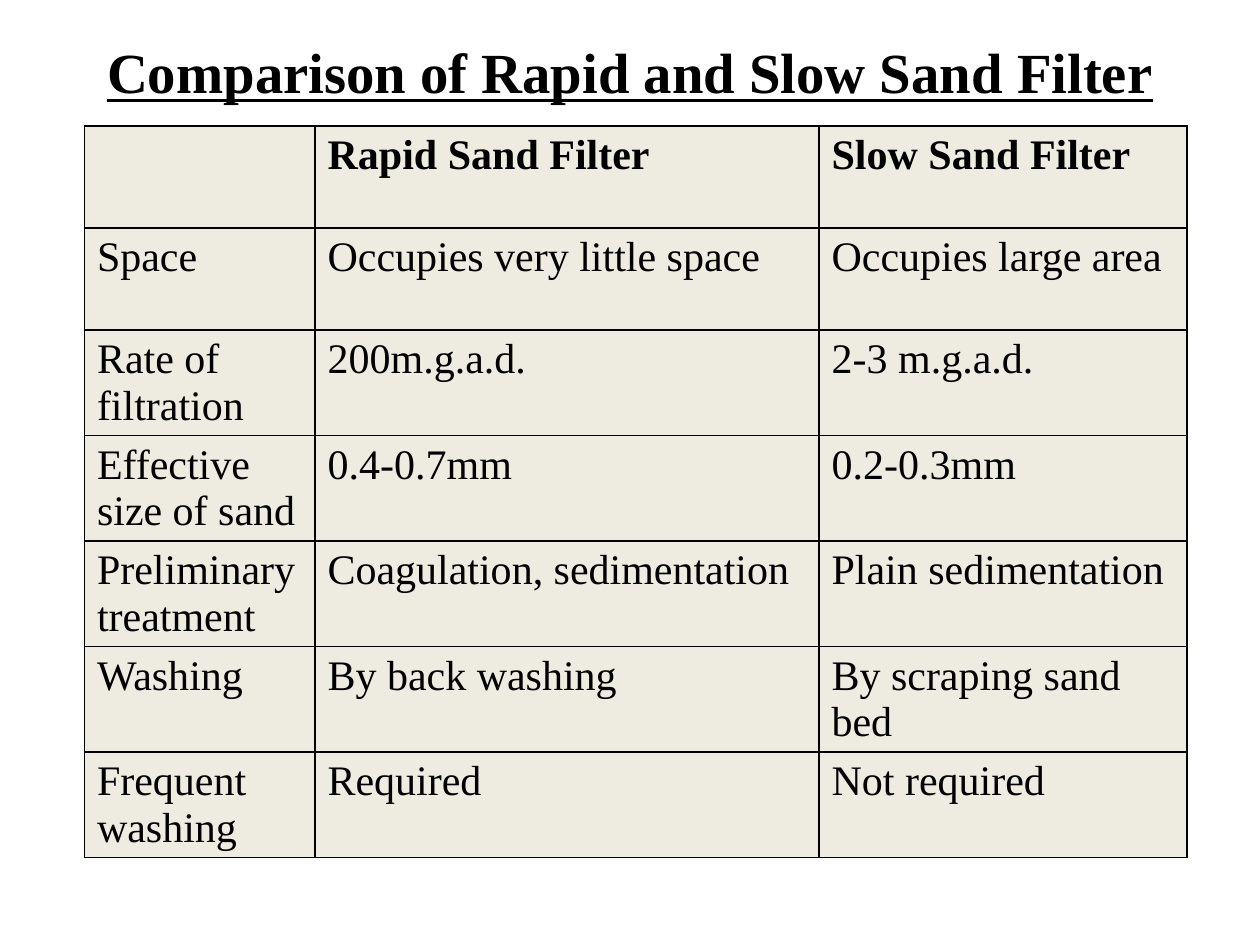
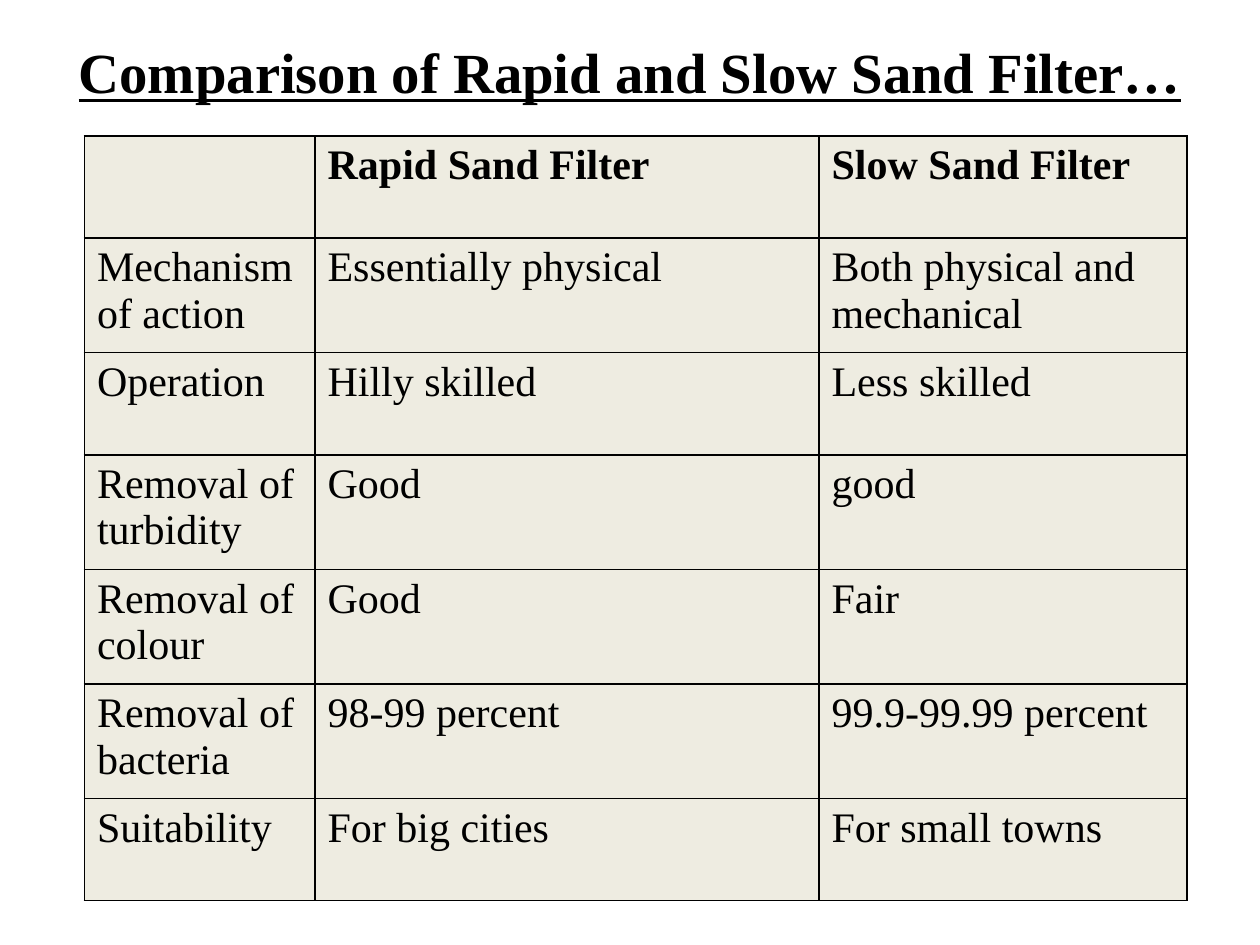
from lxml import etree
from pptx import Presentation
from pptx.dml.color import RGBColor
from pptx.enum import text
from pptx.oxml import ns
from pptx.util import Inches, Pt

COLORS = {"ink": "000000", "cell": "EEECE1"}
FONT = "Times New Roman"
TITLE = "Comparison of Rapid and Slow Sand Filter"
HEADER = ("", "Rapid Sand Filter", "Slow Sand Filter")
COLUMN_WIDTHS = (1.83, 4, 2.92)
TABLE_LEFT = 0.67
ROW_HEIGHT = 0.81

DESIGN_ROWS = [
    ("Space", "Occupies very little space", "Occupies large area"),
    ("Rate of filtration", "200m.g.a.d.", "2-3 m.g.a.d."),
    ("Effective size of sand", "0.4-0.7mm", "0.2-0.3mm"),
    ("Preliminary treatment", "Coagulation, sedimentation", "Plain sedimentation"),
    ("Washing", "By back washing", "By scraping sand bed"),
    ("Frequent washing", "Required", "Not required"),
]
PERFORMANCE_ROWS = [
    ("Mechanism of action", "Essentially physical", "Both physical and mechanical"),
    ("Operation", "Hilly skilled", "Less skilled"),
    ("Removal of turbidity", "Good", "good"),
    ("Removal of colour", "Good", "Fair"),
    ("Removal of bacteria", "98-99 percent", "99.9-99.99 percent"),
    ("Suitability", "For big cities", "For small towns"),
]


def add_run(paragraph, content, size, bold=False, underline=False):
    run = paragraph.add_run()
    run.text = content
    run.font.name = FONT
    run.font.size = Pt(size)
    run.font.bold = bold
    run.font.underline = underline
    run.font.color.rgb = RGBColor.from_string(COLORS["ink"])


def set_title(slide, content):
    title = slide.shapes.title
    title.left, title.top = Inches(0.5), Inches(0.3)
    title.width, title.height = Inches(9), Inches(0.53)
    frame = title.text_frame
    frame.auto_size = text.MSO_AUTO_SIZE.NONE
    frame.vertical_anchor = text.MSO_ANCHOR.MIDDLE
    paragraph = frame.paragraphs[0]
    paragraph.alignment = text.PP_ALIGN.CENTER
    add_run(paragraph, content, 32.4, bold=True, underline=True)


def set_borders(cell):
    properties = cell._tc.get_or_add_tcPr()
    # The schema wants the four lines ahead of the fill.
    for index, side in enumerate(("lnL", "lnR", "lnT", "lnB")):
        line = etree.Element(ns.qn(f"a:{side}"), w=str(Pt(1)))
        fill = etree.SubElement(line, ns.qn("a:solidFill"))
        etree.SubElement(fill, ns.qn("a:srgbClr"), val=COLORS["ink"])
        properties.insert(index, line)


def fill_cell(cell, content, bold):
    cell.fill.solid()
    cell.fill.fore_color.rgb = RGBColor.from_string(COLORS["cell"])
    set_borders(cell)
    if content:
        add_run(cell.text_frame.paragraphs[0], content, 24, bold)


def add_comparison_table(slide, top, rows, wrapped_height):
    """Rows whose label runs over two lines get wrapped_height."""
    rows = [HEADER, *rows]
    heights = [wrapped_height if " " in row[0] else ROW_HEIGHT for row in rows]
    table = slide.shapes.add_table(
        len(rows), len(HEADER), Inches(TABLE_LEFT), Inches(top),
        Inches(sum(COLUMN_WIDTHS)), Inches(sum(heights))).table
    table.first_row = table.horz_banding = False
    for column, width in zip(table.columns, COLUMN_WIDTHS):
        column.width = Inches(width)
    for index, (row, height) in enumerate(zip(rows, heights)):
        table.rows[index].height = Inches(height)
        for cell, content in zip(table.rows[index].cells, row):
            fill_cell(cell, content, bold=index == 0)


def add_comparison_slide(presentation, title, top, rows, wrapped_height=ROW_HEIGHT):
    title_only = presentation.slide_layouts[5]
    slide = presentation.slides.add_slide(title_only)
    set_title(slide, title)
    add_comparison_table(slide, top, rows, wrapped_height)


def main():
    presentation = Presentation()
    presentation.slide_width = Inches(10)
    presentation.slide_height = Inches(7.5)
    add_comparison_slide(presentation, TITLE, 1, DESIGN_ROWS)
    add_comparison_slide(presentation, TITLE + "…", 1.08, PERFORMANCE_ROWS, 0.91)
    presentation.save("out.pptx")


if __name__ == "__main__":
    main()
